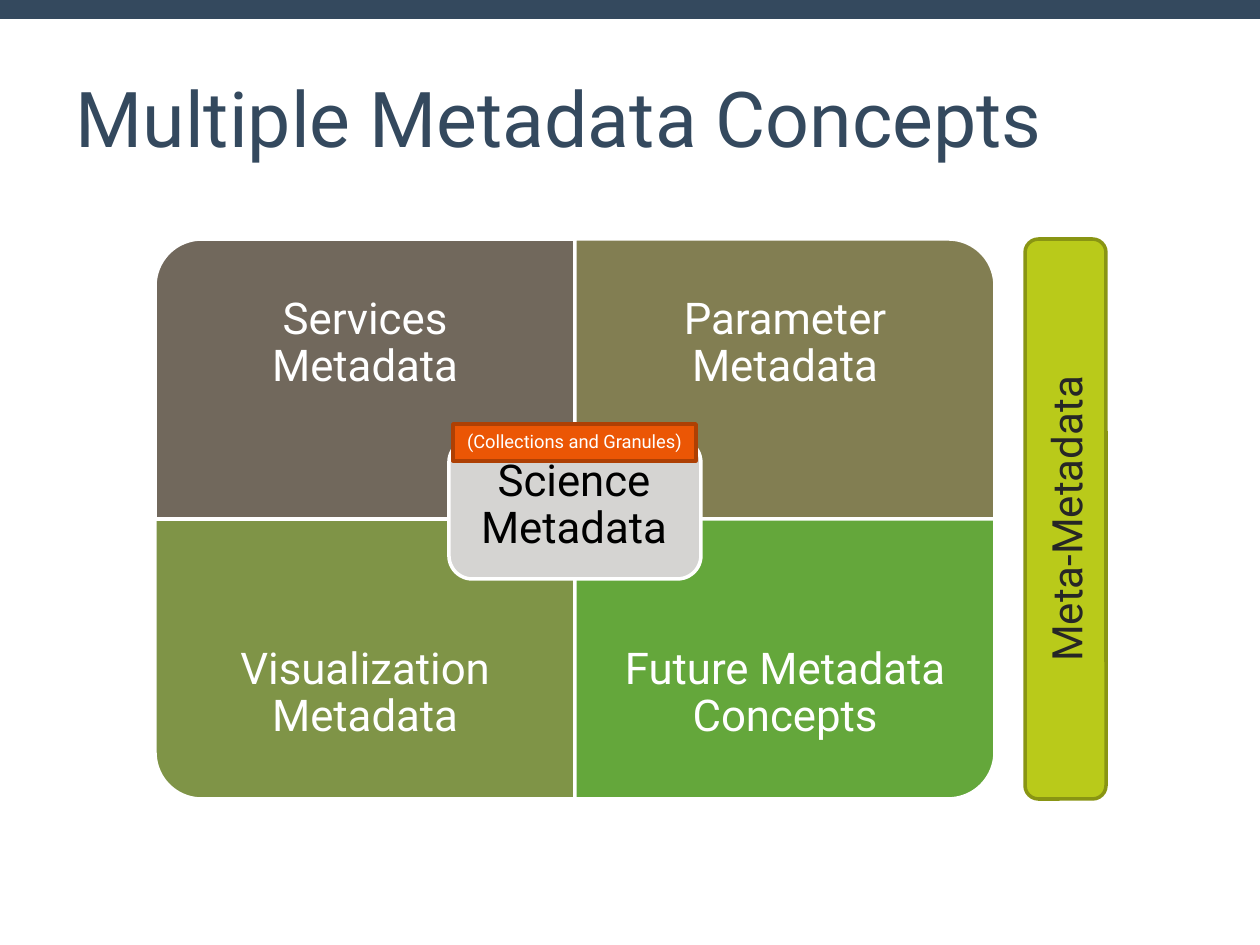
from pptx import Presentation
from pptx.dml.color import RGBColor
from pptx.enum.shapes import MSO_SHAPE
from pptx.enum.text import MSO_ANCHOR, MSO_AUTO_SIZE, PP_ALIGN
from pptx.util import Emu, Pt

RECT = MSO_SHAPE.RECTANGLE
ROUNDED = MSO_SHAPE.ROUNDED_RECTANGLE
ONE_ROUND = MSO_SHAPE.ROUND_1_RECTANGLE
TOP, MIDDLE = MSO_ANCHOR.TOP, MSO_ANCHOR.MIDDLE
LEFT, CENTER = PP_ALIGN.LEFT, PP_ALIGN.CENTER
NO_AUTOFIT = MSO_AUTO_SIZE.NONE
TITLE_ONLY = 5

FONT = "Roboto"
NAVY, WHITE = "34495E", "FFFFFF"
PX = 914400 / 126  # EMU per pixel

# Quadrant grid
GRID_LEFT, GRID_TOP = 155, 239
TILE_W, TILE_H = 420, 280
LABEL_H = 210

# Label, fill and rotation, row by row; the round corner faces outwards
CONCEPTS = [
    ("Services\vMetadata", "71685C", 270),
    ("Parameter Metadata", "827E52", 0),
    ("Visualization Metadata", "7F9447", 180),
    ("Future Metadata Concepts", "64A73B", 90),
]


def px(length):
    return Emu(round(length * PX))


def color(hex_code):
    return RGBColor.from_string(hex_code)


def write(shape, text, size=25, ink=WHITE, align=CENTER, anchor=MIDDLE,
          inset=None, spacing=None, wrap=True):
    frame = shape.text_frame
    frame.auto_size = NO_AUTOFIT
    frame.word_wrap = wrap
    frame.vertical_anchor = anchor
    if inset is not None:
        frame.margin_left = frame.margin_right = px(inset)
        frame.margin_top = frame.margin_bottom = px(inset)
    frame.text = text
    paragraph = frame.paragraphs[0]
    paragraph.alignment = align
    if spacing:
        paragraph.line_spacing = spacing
    for run in paragraph.runs:
        run.font.name = FONT
        run.font.size = Pt(size)
        run.font.color.rgb = color(ink)


def add_block(slide, kind, left, top, width, height, fill, outline=None):
    block = slide.shapes.add_shape(kind, px(left), px(top), px(width), px(height))
    block.shadow.inherit = False
    block.fill.solid()
    block.fill.fore_color.rgb = color(fill)
    if outline:
        block.line.color.rgb = color(outline)
        block.line.width = Pt(2)
    else:
        block.line.fill.background()
    return block


def add_label(slide, left, top, width, height, text, **style):
    label = slide.shapes.add_textbox(px(left), px(top), px(width), px(height))
    write(label, text, spacing=0.9, **style)


def add_quadrant(slide, index, text, fill, rotation):
    row, column = divmod(index, 2)
    left = GRID_LEFT + column * TILE_W
    top = GRID_TOP + row * TILE_H
    # A quarter turn swaps the sides around the same centre
    turn = (TILE_W - TILE_H) // 2 if rotation % 180 else 0
    tile = add_block(slide, ONE_ROUND, left + turn, top - turn,
                     TILE_W - 2 * turn, TILE_H + 2 * turn, fill, WHITE)
    tile.rotation = rotation
    label_top = top + row * (TILE_H - LABEL_H)
    add_label(slide, left, label_top, TILE_W, LABEL_H, text, inset=24)


def add_title(slide, text):
    title = slide.shapes.title
    title.left, title.top = px(63), px(38)
    title.width, title.height = px(1134), px(158)
    write(title, text, size=44, ink=NAVY, align=LEFT)


def main():
    deck = Presentation()
    deck.slide_width, deck.slide_height = px(1260), px(945)
    slide = deck.slides.add_slide(deck.slide_layouts[TITLE_ONLY])

    # Header
    add_block(slide, RECT, 0, 0, 1260, 19, NAVY)
    add_title(slide, "Multiple Metadata Concepts")

    # Four surrounding concepts
    for index, concept in enumerate(CONCEPTS):
        add_quadrant(slide, index, *concept)

    # Central concept
    add_block(slide, ROUNDED, 449, 439, 252, 140, "D5D4D2", WHITE)
    add_label(slide, 455, 446, 238, 126, "Science Metadata",
              ink="000000", anchor=TOP, inset=13)

    # Meta-metadata bar, read upwards
    meta = add_block(slide, ROUNDED, 1025, 239, 81, 560, "B9CA1A", "899513")
    write(meta, "Meta-Metadata", size=24, ink="262626")
    meta.text_frame._txBody.bodyPr.set("vert", "vert270")

    # Tag over the central concept
    tag = add_block(slide, RECT, 453, 424, 243, 37, "EB5605", "AE4004")
    write(tag, "(Collections and Granules)", size=10.5, anchor=TOP, wrap=False)

    deck.save("out.pptx")


if __name__ == "__main__":
    main()
